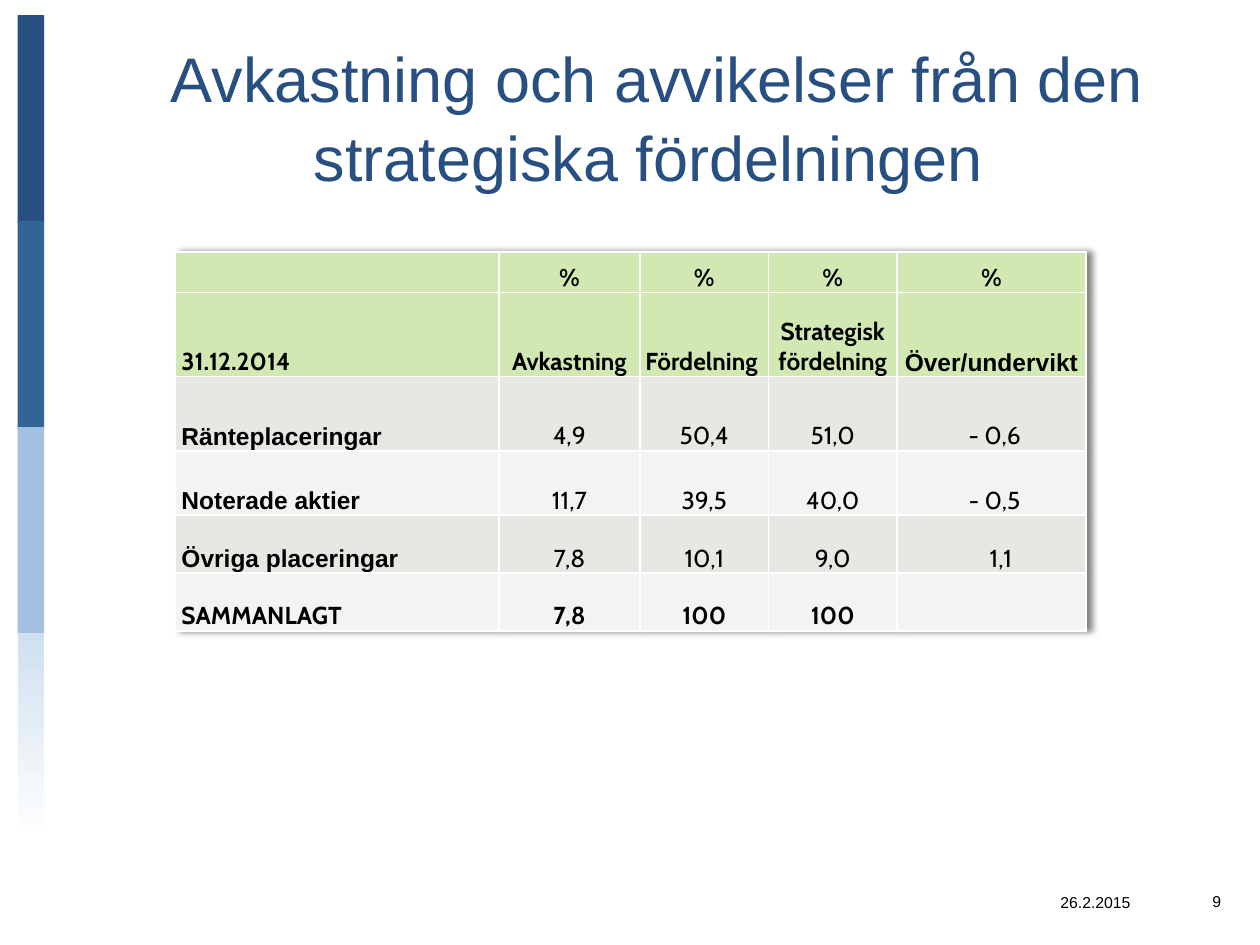
from dataclasses import dataclass

from lxml import etree
from pptx import Presentation
from pptx.dml.color import RGBColor
from pptx.enum.shapes import MSO_SHAPE
from pptx.enum.text import MSO_ANCHOR, PP_ALIGN
from pptx.oxml.ns import qn
from pptx.util import Inches, Pt

RECT = MSO_SHAPE.RECTANGLE
MIDDLE, BOTTOM = MSO_ANCHOR.MIDDLE, MSO_ANCHOR.BOTTOM
LEFT, CENTER, RIGHT = PP_ALIGN.LEFT, PP_ALIGN.CENTER, PP_ALIGN.RIGHT

COLUMNS, ROWS = 100, 75  # the grid of the slide


@dataclass(frozen=True)
class Theme:
    navy: str = "274F81"
    blue: str = "326496"
    sky: str = "A2C1E0"
    mist: str = "D0E0F0"
    white: str = "FFFFFF"
    black: str = "000000"
    header: str = "D1E8B2"
    bands: tuple = ("E9E7E3", "F5F3F2")
    sans: str = "Arial"
    figures: str = "Cabin"
    title_size: int = 36
    table_size: int = 14
    footer_size: int = 9


class Deck:
    """Holds the theme and the current slide; lengths are grid units."""

    def __init__(self, theme):
        self.theme = theme
        self.prs = Presentation()
        self.prs.slide_width, self.prs.slide_height = Inches(10), Inches(7.5)
        self.slide = self.prs.slides.add_slide(self.prs.slide_layouts[5])

    def x(self, columns):
        return round(self.prs.slide_width * columns / COLUMNS)

    def y(self, rows):
        return round(self.prs.slide_height * rows / ROWS)

    def box(self, left, top, width, height):
        return self.x(left), self.y(top), self.x(width), self.y(height)

    def add_text(self, paragraph, text, size, color, font, align, bold=False):
        paragraph.alignment = align
        run = paragraph.add_run()
        run.text = text
        run.font.size, run.font.name, run.font.bold = Pt(size), font, bold
        run.font.color.rgb = RGBColor.from_string(color)

    def title(self, text, *place):
        heading = self.slide.shapes.title
        heading.left, heading.top, heading.width, heading.height = self.box(*place)
        heading.text_frame.vertical_anchor = MIDDLE
        paragraph = heading.text_frame.paragraphs[0]
        paragraph.line_spacing = 1.05
        self.add_text(paragraph, text, self.theme.title_size, self.theme.navy,
                      self.theme.sans, CENTER)

    def bar(self, colors, *place):
        block = self.slide.shapes.add_shape(RECT, *self.box(*place))
        block.shadow.inherit = False
        block.line.fill.background()
        if len(colors) == 1:
            block.fill.solid()
            block.fill.fore_color.rgb = RGBColor.from_string(colors[0])
            return
        block.fill.gradient()
        block.fill.gradient_angle = 270
        for stop, color in zip(block.fill.gradient_stops, colors):
            stop.color.rgb = RGBColor.from_string(color)

    def footer(self, text, *place):
        frame = self.slide.shapes.add_textbox(*self.box(*place)).text_frame
        frame.word_wrap = True
        frame.vertical_anchor = MIDDLE
        self.add_text(frame.paragraphs[0], text, self.theme.footer_size,
                      self.theme.black, self.theme.sans, RIGHT)

    def table(self, left, top, widths, heights):
        place = self.box(left, top, sum(widths), sum(heights))
        grid = self.slide.shapes.add_table(len(heights), len(widths), *place).table
        for column, width in zip(grid.columns, widths):
            column.width = self.x(width)
        for row, height in zip(grid.rows, heights):
            row.height = self.y(height)
        # Soft shadow around the whole table
        properties = grid._tbl.tblPr
        effects = etree.Element(qn("a:effectLst"))
        properties.insert(0, effects)
        shadow = etree.SubElement(effects, qn("a:outerShdw"), blurRad="50800",
                                  dist="38100", dir="0", algn="l", rotWithShape="0")
        shade = etree.SubElement(shadow, qn("a:srgbClr"), val=self.theme.black)
        etree.SubElement(shade, qn("a:alpha"), val="50000")
        return grid

    def cell(self, cell, text, fill, font, bold, align, indent=0):
        cell.fill.solid()
        cell.fill.fore_color.rgb = RGBColor.from_string(fill)
        cell.margin_left = self.x(indent)
        cell.margin_right = cell.margin_top = cell.margin_bottom = 0
        cell.vertical_anchor = BOTTOM
        if not text:
            return
        for number, line in enumerate(text.split("\n")):
            frame = cell.text_frame
            paragraph = frame.add_paragraph() if number else frame.paragraphs[0]
            self.add_text(paragraph, line, self.theme.table_size, self.theme.black,
                          font, align, bold)


RETURNS = [
    ["", "%", "%", "%", "%"],
    ["31.12.2014", "Avkastning", "Fördelning ", "Strategisk\nfördelning",
     "Över/undervikt"],
    ["Ränteplaceringar", "4,9", "50,4", "51,0", "- 0,6"],
    ["Noterade aktier", "11,7", "39,5", "40,0", "- 0,5"],
    ["Övriga placeringar", "7,8", "10,1", "9,0", "1,1"],
    ["SAMMANLAGT", "7,8", "100", "100", ""],
]
HEADER_ROWS = 2
ASSET_ROWS = range(HEADER_ROWS, len(RETURNS) - 1)
DEVIATION_INDENT = {"- 0,6": 0.5, "- 0,5": 0.5, "1,1": 1.5}


def main():
    theme = Theme()
    deck = Deck(theme)

    # Colour strip on the left edge
    strip = [(theme.navy,), (theme.blue,), (theme.sky,), (theme.mist, theme.white)]
    for step, colors in enumerate(strip):
        deck.bar(colors, 1.4, 1.2 + 16.35 * step, 2.1, 16.5)

    deck.title("Avkastning och avvikelser från den strategiska fördelningen ",
               4.3, 2.8, 95.7, 12.6)

    # Returns and allocation
    returns = deck.table(13.9, 20, [25.7, 11.2, 10.2, 10.2, 15],
                         [3.2, 6.7, 5.9, 5.1, 4.6, 4.6])
    for r, values in enumerate(RETURNS):
        fill = theme.header if r < HEADER_ROWS else theme.bands[r % 2]
        for c, text in enumerate(values):
            label = c == 0
            asset_name = label and r in ASSET_ROWS
            arial = asset_name or text == "Över/undervikt"
            deck.cell(returns.cell(r, c), text, fill,
                      font=theme.sans if arial else theme.figures,
                      bold=label or r not in ASSET_ROWS,
                      align=LEFT if label else CENTER,
                      indent=0.5 if label else DEVIATION_INDENT.get(text, 0))

    # Date and page number
    deck.footer("26.2.2015", 81.2, 69.6, 9.5, 4)
    deck.footer("9", 91.6, 69.5, 6.3, 4)

    deck.prs.save("out.pptx")


if __name__ == "__main__":
    main()
